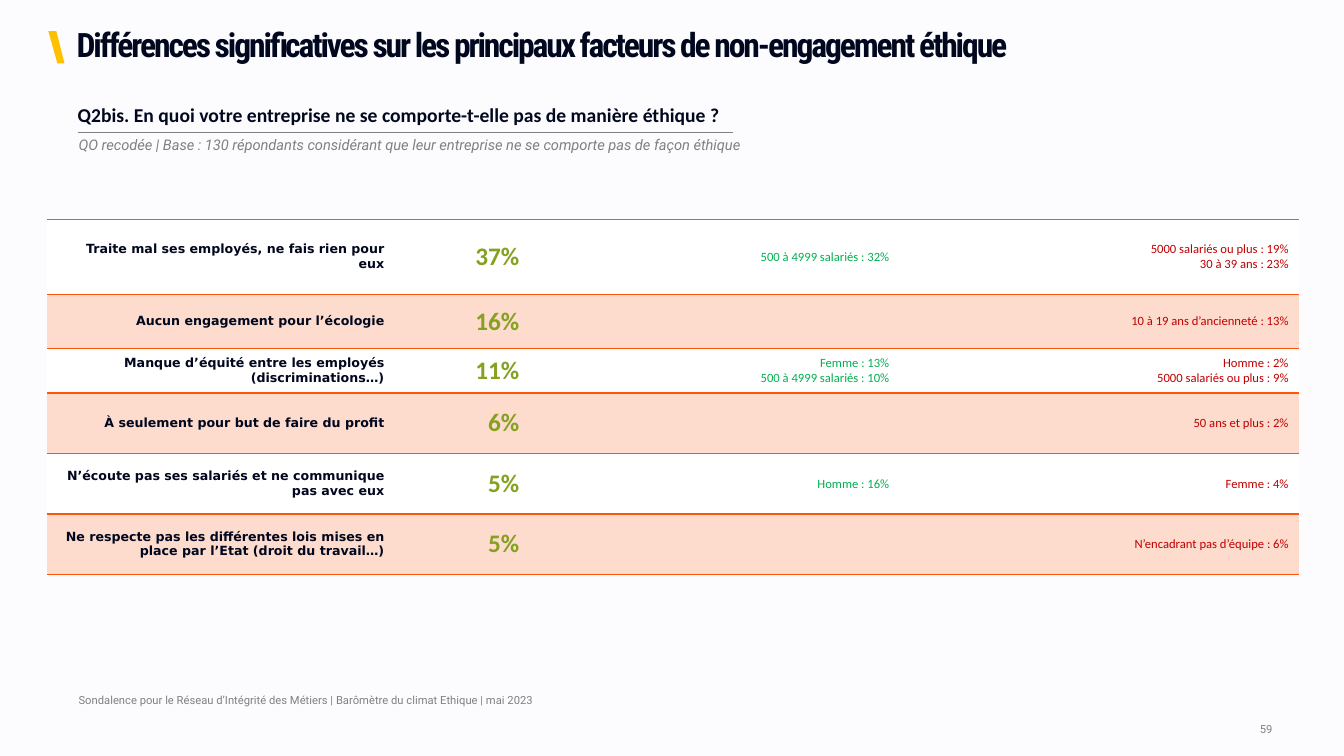
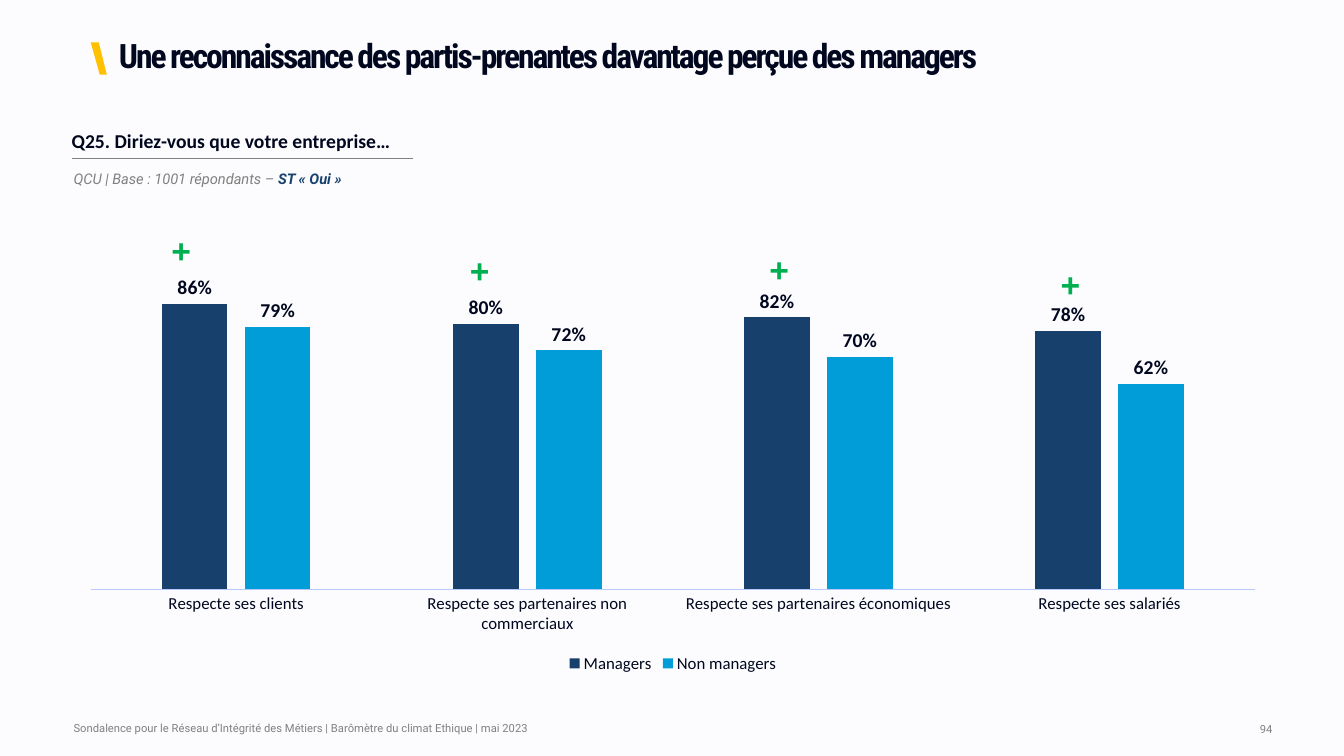
from dataclasses import dataclass
from typing import NamedTuple

from lxml import etree
from pptx import Presentation
from pptx.chart.data import CategoryChartData
from pptx.dml.color import RGBColor
from pptx.enum.chart import XL_CHART_TYPE, XL_LABEL_POSITION, XL_LEGEND_POSITION, XL_TICK_MARK
from pptx.enum.text import MSO_ANCHOR, PP_ALIGN
from pptx.oxml.ns import qn
from pptx.util import Inches, Pt

BACKGROUND = RGBColor(0xFC, 0xFC, 0xFE)
INK = RGBColor(0x00, 0x07, 0x1E)
GREY = RGBColor(0x80, 0x80, 0x80)
YELLOW = RGBColor(0xFF, 0xC0, 0x00)
WHITE = RGBColor(0xFF, 0xFF, 0xFF)
PEACH = RGBColor(0xFD, 0xDB, 0xCD)
ORANGE = RGBColor(0xFD, 0x56, 0x08)
OLIVE = RGBColor(0x84, 0xA1, 0x20)
GREEN = RGBColor(0x00, 0xB0, 0x50)
RED = RGBColor(0xC0, 0x00, 0x00)
NAVY = RGBColor(0x17, 0x40, 0x6D)
SKY = RGBColor(0x00, 0x9D, 0xD9)
AXIS_BLUE = RGBColor(0xB7, 0xC8, 0xFF)

LEFT, RIGHT = PP_ALIGN.LEFT, PP_ALIGN.RIGHT
TOP, MIDDLE = MSO_ANCHOR.TOP, MSO_ANCHOR.MIDDLE
COLUMN_CLUSTERED = XL_CHART_TYPE.COLUMN_CLUSTERED
OUTSIDE_END = XL_LABEL_POSITION.OUTSIDE_END
LEGEND_BOTTOM = XL_LEGEND_POSITION.BOTTOM
NO_TICK = XL_TICK_MARK.NONE

FOOTER = "Sondalence pour le Réseau d’Intégrité des Métiers | Barômètre du climat Ethique | mai 2023"


class Box(NamedTuple):
    left: float
    top: float
    width: float
    height: float

    def lengths(self):
        return tuple(Inches(value) for value in self)


@dataclass(frozen=True)
class TextStyle:
    font: str
    size: float
    color: RGBColor
    bold: bool = False
    italic: bool = False


@dataclass(frozen=True)
class Frame:
    title: str
    title_box: Box
    question: str
    question_box: Box
    base_box: Box
    base: tuple
    footer_box: Box
    number: str


class Factor(NamedTuple):
    label: str
    share: str
    above: str
    below: str
    height: float


class Series(NamedTuple):
    name: str
    values: tuple
    color: RGBColor


TITLE_STYLE = TextStyle("Roboto Condensed", 24, INK, bold=True)
QUESTION_STYLE = TextStyle("Calibri", 14, INK, bold=True)
BASE_STYLE = TextStyle("Roboto", 10.5, GREY, italic=True)
BASE_ACCENT = TextStyle("Roboto", 10.5, NAVY, bold=True, italic=True)
FOOTER_STYLE = TextStyle("Roboto", 8, GREY)
PLUS_STYLE = TextStyle("Arial", 24, GREEN, bold=True)
AXIS_STYLE = TextStyle("Calibri", 12, INK)
FACTOR_STYLES = (
    TextStyle("DejaVu Sans", 9, INK, bold=True),
    TextStyle("Calibri", 18, OLIVE, bold=True),
    TextStyle("Calibri", 9, GREEN),
    TextStyle("Calibri", 9, RED),
)
FACTOR_WIDTHS = (3.44, 1.34, 3.67, 3.96)

FACTORS = (
    Factor("Traite mal ses employés, ne fais rien pour eux", "37%",
           "500 à 4999 salariés : 32%", "5000 salariés ou plus : 19%\n30 à 39 ans : 23%", 0.74),
    Factor("Aucun engagement pour l’écologie", "16%", "", "10 à 19 ans d’ancienneté : 13%", 0.54),
    Factor("Manque d’équité entre les employés (discriminations…)", "11%",
           "Femme : 13%\n500 à 4999 salariés : 10%", "Homme : 2%\n5000 salariés ou plus : 9%", 0.44),
    Factor("À seulement pour but de faire du profit", "6%", "", "50 ans et plus : 2%", 0.6),
    Factor("N’écoute pas ses salariés et ne communique pas avec eux", "5%",
           "Homme : 16%", "Femme : 4%", 0.6),
    Factor("Ne respecte pas les différentes lois mises en place par l’Etat (droit du travail…)", "5%",
           "", "N’encadrant pas d’équipe : 6%", 0.6),
)

CATEGORIES = ("Respecte ses clients", "Respecte ses partenaires non commerciaux",
              "Respecte ses partenaires économiques", "Respecte ses salariés")
SERIES = (
    Series("Managers", (0.86, 0.8, 0.82, 0.78), NAVY),
    Series("Non managers", (0.79, 0.72, 0.7, 0.62), SKY),
)
PLUS_POSITIONS = ((1.7, 2.28), (4.66, 2.48), (7.63, 2.47), (10.52, 2.62))

FACTORS_FRAME = Frame(
    "Différences significatives sur les principaux facteurs de non-engagement éthique",
    Box(0.48, 0.28, 12.63, 0.36),
    "Q2bis. En quoi votre entreprise ne se comporte-t-elle pas de manière éthique ?",
    Box(0.77, 0.99, 6.5, 0.31),
    Box(0.78, 1.35, 6.92, 0.18),
    (("QO recodée | Base : 130 répondants considérant que leur entreprise "
      "ne se comporte pas de façon éthique", BASE_STYLE),),
    Box(0.78, 6.82, 9.96, 0.25),
    "59",
)
RECOGNITION_FRAME = Frame(
    "Une reconnaissance des partis-prenantes davantage perçue des managers",
    Box(0.9, 0.39, 11.87, 0.36),
    "Q25. Diriez-vous que votre entreprise…",
    Box(0.71, 1.25, 3.39, 0.31),
    Box(0.73, 1.68, 5.52, 0.18),
    (("QCU | Base : 1001 répondants – ", BASE_STYLE), ("ST « Oui »", BASE_ACCENT)),
    Box(0.73, 7.1, 9.96, 0.25),
    "94",
)


def apply_font(font, style: TextStyle) -> None:
    font.name = style.font
    font.size = Pt(style.size)
    font.color.rgb = style.color
    font.bold = style.bold
    font.italic = style.italic


def set_margins(holder, left: float, top: float, right: float, bottom: float) -> None:
    holder.margin_left, holder.margin_top = Inches(left), Inches(top)
    holder.margin_right, holder.margin_bottom = Inches(right), Inches(bottom)


def add_text(slide, box: Box, parts: tuple, align=LEFT, anchor=TOP) -> None:
    text_frame = slide.shapes.add_textbox(*box.lengths()).text_frame
    text_frame.word_wrap = True
    text_frame.vertical_anchor = anchor
    set_margins(text_frame, 0, 0, 0, 0)
    paragraph = text_frame.paragraphs[0]
    paragraph.alignment = align
    for text, style in parts:
        run = paragraph.add_run()
        run.text = text
        apply_font(run.font, style)


def set_borders(cell, color: RGBColor, width: float, sides: tuple) -> None:
    properties = cell._tc.get_or_add_tcPr()
    for side in ("lnL", "lnR", "lnT", "lnB"):
        line = etree.SubElement(properties, qn(f"a:{side}"))
        if side in sides:
            line.set("w", str(Pt(width)))
            fill = etree.SubElement(line, qn("a:solidFill"))
            etree.SubElement(fill, qn("a:srgbClr"), val=str(color))
        else:
            line.set("w", "0")
            etree.SubElement(line, qn("a:noFill"))


def add_plain_table(slide, box: Box, rows: int, columns: int):
    table = slide.shapes.add_table(rows, columns, *box.lengths()).table
    table.first_row = False
    table.horz_banding = False
    return table


def fill_cell(cell, text: str, style: TextStyle, align) -> None:
    cell.text_frame.text = text
    for paragraph in cell.text_frame.paragraphs:
        paragraph.alignment = align
        apply_font(paragraph.font, style)
        for run in paragraph.runs:
            apply_font(run.font, style)


def add_title(slide, text: str, box: Box) -> None:
    title = slide.shapes.title
    title.left, title.top, title.width, title.height = box.lengths()
    text_frame = title.text_frame
    text_frame.text = text
    text_frame.word_wrap = True
    text_frame.vertical_anchor = MIDDLE
    set_margins(text_frame, 0.28, 0, 0, 0)
    paragraph = text_frame.paragraphs[0]
    paragraph.alignment = LEFT
    paragraph.line_spacing = 0.9
    run = paragraph.runs[0]
    apply_font(run.font, TITLE_STYLE)
    run._r.get_or_add_rPr().set("spc", "-150")


def add_slash(slide, left: float, top: float) -> None:
    points = [(Inches(left + x), Inches(top + y))
              for x, y in ((0, 0), (0.08, 0), (0.16, 0.32), (0.09, 0.32))]
    builder = slide.shapes.build_freeform(*points[0])
    builder.add_line_segments(points[1:], close=True)
    slash = builder.convert_to_shape()
    slash.shadow.inherit = False
    slash.fill.solid()
    slash.fill.fore_color.rgb = YELLOW
    slash.line.fill.background()


def add_question(slide, text: str, box: Box) -> None:
    table = add_plain_table(slide, box, 1, 1)
    cell = table.cell(0, 0)
    set_margins(cell, 0, 0.04, 0.08, 0.04)
    fill_cell(cell, text, QUESTION_STYLE, LEFT)
    set_borders(cell, GREY, 0.25, ("lnB",))
    cell.fill.background()


def add_framed_slide(presentation, frame: Frame):
    slide = presentation.slides.add_slide(presentation.slide_layouts[5])
    add_title(slide, frame.title, frame.title_box)
    add_slash(slide, frame.title_box.left, frame.title_box.top + 0.03)
    add_question(slide, frame.question, frame.question_box)
    add_text(slide, frame.base_box, frame.base)
    add_text(slide, frame.footer_box, ((FOOTER, FOOTER_STYLE),), anchor=MIDDLE)
    add_text(slide, Box(11.65, 7.11, 0.97, 0.25), ((frame.number, FOOTER_STYLE),), RIGHT, MIDDLE)
    return slide


def add_factor_table(slide) -> None:
    table = add_plain_table(slide, Box(0.47, 2.18, 12.4, 3.51), len(FACTORS), len(FACTOR_WIDTHS))
    for column, width in zip(table.columns, FACTOR_WIDTHS):
        column.width = Inches(width)
    for index, factor in enumerate(FACTORS):
        table.rows[index].height = Inches(factor.height)
        texts = (factor.label, factor.share, factor.above, factor.below)
        for cell, text, style in zip(table.rows[index].cells, texts, FACTOR_STYLES):
            cell.vertical_anchor = MIDDLE
            fill_cell(cell, text, style, RIGHT)
            set_borders(cell, ORANGE, 1, ("lnT", "lnB"))
            cell.fill.solid()
            cell.fill.fore_color.rgb = PEACH if index % 2 else WHITE


def place_plot(chart, box: Box) -> None:
    plot_area = chart._chartSpace.chart.plotArea
    for old_layout in plot_area.findall(qn("c:layout")):
        plot_area.remove(old_layout)
    layout = etree.Element(qn("c:layout"))
    manual = etree.SubElement(layout, qn("c:manualLayout"))
    settings = (("layoutTarget", "inner"), ("xMode", "edge"), ("yMode", "edge"),
                *zip("xywh", box))
    for tag, value in settings:
        etree.SubElement(manual, qn(f"c:{tag}"), val=str(value))
    plot_area.insert(0, layout)


def add_recognition_chart(slide) -> None:
    data = CategoryChartData(number_format="0%")
    data.categories = CATEGORIES
    for series in SERIES:
        data.add_series(series.name, series.values)
    box = Box(0.66, 2.47, 12.03, 4.25)
    chart = slide.shapes.add_chart(COLUMN_CLUSTERED, *box.lengths(), data).chart
    apply_font(chart.font, TextStyle("Calibri", 10, INK))
    chart.has_title = False
    chart.has_legend = True
    chart.legend.position = LEGEND_BOTTOM
    chart.legend.include_in_layout = False
    apply_font(chart.legend.font, AXIS_STYLE)
    chart.value_axis.visible = False
    chart.value_axis.has_major_gridlines = False
    chart.value_axis.minimum_scale = 0
    chart.value_axis.maximum_scale = 1
    category_axis = chart.category_axis
    category_axis.major_tick_mark = NO_TICK
    category_axis.format.line.color.rgb = AXIS_BLUE
    category_axis.format.line.width = Pt(0.75)
    apply_font(category_axis.tick_labels.font, AXIS_STYLE)
    plot = chart.plots[0]
    plot.gap_width = 219
    plot.overlap = -27
    plot.vary_by_categories = False
    for drawn, series in zip(plot.series, SERIES):
        drawn.format.fill.solid()
        drawn.format.fill.fore_color.rgb = series.color
        labels = drawn.data_labels
        labels.show_value = True
        labels.position = OUTSIDE_END
        labels.number_format = "0%"
        labels.number_format_is_linked = False
        apply_font(labels.font, QUESTION_STYLE)
    place_plot(chart, Box(0.02, 0.02, 0.96, 0.775))


def main() -> None:
    presentation = Presentation()
    presentation.slide_width, presentation.slide_height = Inches(13.33), Inches(7.5)
    background = presentation.slide_master.background.fill
    background.solid()
    background.fore_color.rgb = BACKGROUND
    add_factor_table(add_framed_slide(presentation, FACTORS_FRAME))
    recognition = add_framed_slide(presentation, RECOGNITION_FRAME)
    add_recognition_chart(recognition)
    for left, top in PLUS_POSITIONS:
        add_text(recognition, Box(left, top, 0.34, 0.4), (("+", PLUS_STYLE),))
    presentation.save("out.pptx")


if __name__ == "__main__":
    main()
